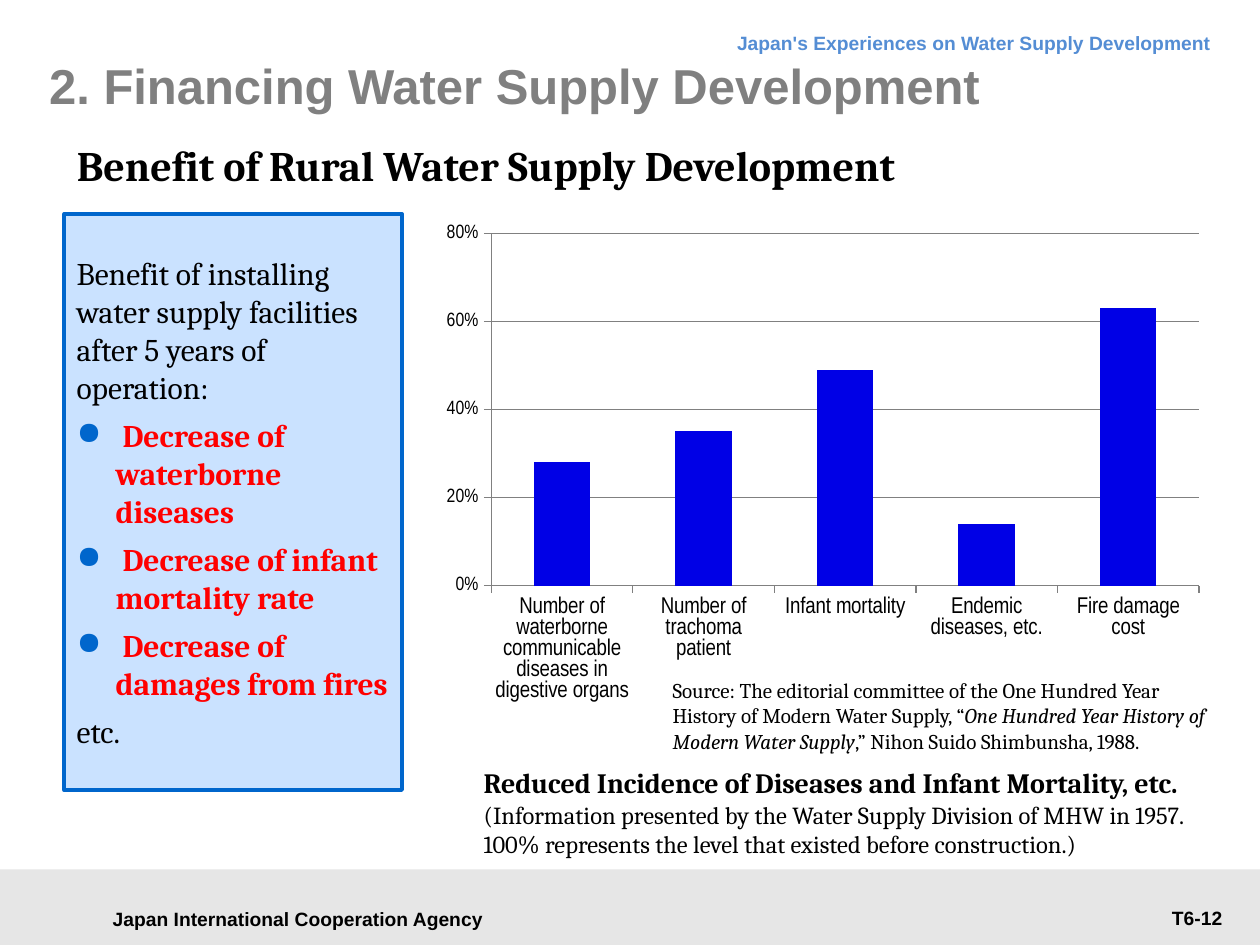
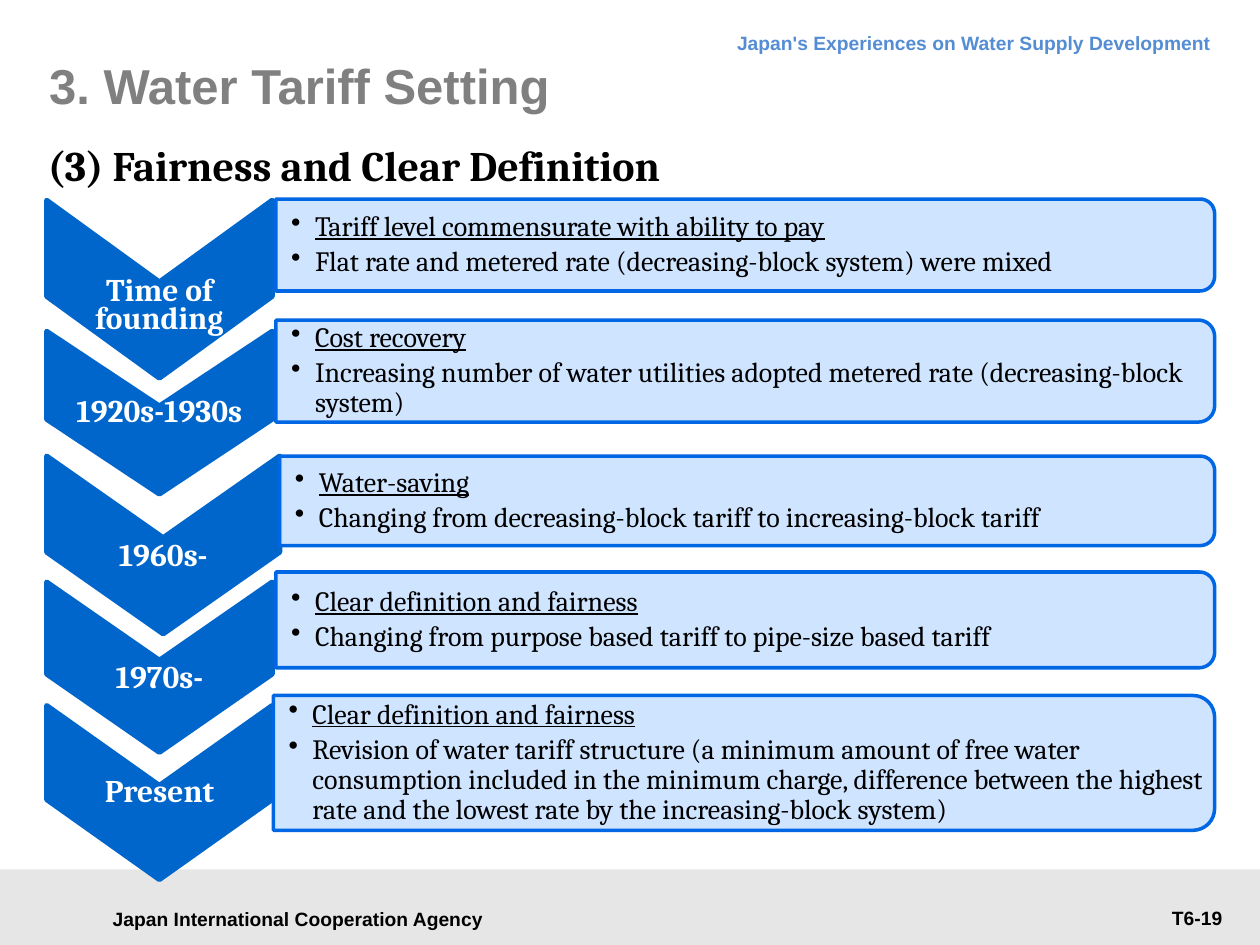
"""Build two slides on financing and tariffs of water supply in Japan."""
from dataclasses import dataclass
from math import cos, pi, sin

from lxml.etree import SubElement
from pptx import Presentation
from pptx.chart.data import CategoryChartData
from pptx.dml.color import RGBColor
from pptx.enum.chart import XL_CHART_TYPE, XL_TICK_MARK
from pptx.enum.shapes import MSO_SHAPE
from pptx.enum.text import MSO_ANCHOR, PP_ALIGN
from pptx.oxml.ns import qn
from pptx.util import Inches, Pt

COLUMNS, ROWS = 100, 75


@dataclass(frozen=True)
class Style:
    """Type face, size, colour and weight of a paragraph."""
    face: str
    size: int
    color: str = "000000"
    bold: bool = False


@dataclass(frozen=True)
class Theme:
    """Colours and type styles of the deck."""
    band: str = "E6E6E6"
    blue: str = "0066CC"
    edge: str = "0067E4"
    pale: str = "CAE2FF"
    red: str = "FF0000"
    bar: str = "0000E6"
    rule: str = "808080"
    title: Style = Style("Arial", 28, "808080", True)
    strap: Style = Style("Arial", 11, "548DD4", True)
    footer: Style = Style("Arial", 11, bold=True)
    heading: Style = Style("Cambria", 24, bold=True)
    body: Style = Style("Cambria", 18)
    gain: Style = Style("Cambria", 18, "FF0000", True)
    era: Style = Style("Cambria", 18, "FFFFFF", True)
    policy: Style = Style("Cambria", 16)
    caption: Style = Style("Cambria", 14)
    source: Style = Style("Cambria", 12)
    axis: Style = Style("Arial Narrow", 11)
    category: Style = Style("Arial Narrow", 13)


THEME = Theme()


def grid(*cells):
    """Turn grid cells of a tenth of an inch into lengths."""
    return [Inches(cell / 10) for cell in cells]


def rgb(color):
    """Return a colour object for a hexadecimal string."""
    return RGBColor.from_string(color)


def set_font(font, style):
    """Apply a style to a font."""
    font.name, font.size, font.bold = style.face, Pt(style.size), style.bold
    font.color.rgb = rgb(style.color)


def write(para, style, *spans):
    """Fill a paragraph with plain spans or (text, changes) pairs."""
    set_font(para.font, style)
    for part in spans:
        text, changes = (part, {}) if isinstance(part, str) else part
        span = para.add_run()
        span.text = text
        for name, value in changes.items():
            setattr(span.font, name, value)


def next_para(frame):
    """Return the empty first paragraph, or a new one."""
    first = frame.paragraphs[0]
    return frame.add_paragraph() if first.runs else first


def indent(para, margin, first=0):
    """Set the left margin and first line indent in inches."""
    props = para._p.get_or_add_pPr()
    props.set("marL", str(Inches(margin)))
    props.set("indent", str(Inches(first)))


def add_bullet(para, mark, hang, color=None):
    """Give a paragraph a hanging bullet."""
    indent(para, hang, -hang)
    props = para._p.get_or_add_pPr()
    if color:
        SubElement(SubElement(props, qn("a:buClr")), qn("a:srgbClr")).set("val", color)
    SubElement(props, qn("a:buChar")).set("char", mark)


def set_frame(shape, anchor, insets=(1, 0.5, 1, 0.5)):
    """Set wrapping, anchor and insets of a shape's text."""
    frame = shape.text_frame
    frame.word_wrap, frame.vertical_anchor = True, anchor
    (frame.margin_left, frame.margin_top,
     frame.margin_right, frame.margin_bottom) = grid(*insets)
    return frame


def add_label(page, place, style, *spans, anchor=MSO_ANCHOR.TOP,
              align=PP_ALIGN.LEFT, insets=(1, 0.5, 1, 0.5)):
    """Add a text box with one paragraph and return the paragraph."""
    box = page.shapes.add_textbox(*grid(*place))
    para = set_frame(box, anchor, insets).paragraphs[0]
    para.alignment = align
    write(para, style, *spans)
    return para


def paint(shape, fill, edge=None, weight=0):
    """Give a shape a flat fill and an optional outline."""
    shape.shadow.inherit = False
    shape.fill.solid()
    shape.fill.fore_color.rgb = rgb(fill)
    if edge:
        shape.line.color.rgb, shape.line.width = rgb(edge), Pt(weight)
    else:
        shape.line.fill.background()


def add_outline(page, points):
    """Add a closed freeform through grid points."""
    corners = [tuple(grid(*point)) for point in points]
    builder = page.shapes.build_freeform(*corners[0], scale=1.0)
    builder.add_line_segments(corners[1:], close=True)
    return builder.convert_to_shape()


def add_page(deck, title, number):
    """Add a page with band, footers, strapline and title."""
    page = deck.slides.add_slide(deck.slide_layouts[6])
    band = page.shapes.add_shape(MSO_SHAPE.RECTANGLE, *grid(0, 69, COLUMNS, 6))
    paint(band, THEME.band)
    add_label(page, (7.1, 71.2, 33.1, 3.4), THEME.footer,
              "Japan International Cooperation Agency",
              anchor=MSO_ANCHOR.MIDDLE, align=PP_ALIGN.CENTER)
    strap = add_label(page, (27.2, 1.3, 69.9, 3.8), THEME.strap,
                      "Japan's Experiences on Water Supply Development",
                      align=PP_ALIGN.RIGHT)
    strap.line_spacing = Pt(18)
    add_label(page, (82.3, 71.4, 15.7, 2.9), THEME.footer, number,
              align=PP_ALIGN.RIGHT)
    add_label(page, (3.9, 2.8, 89.8, 7.9), THEME.title, title,
              anchor=MSO_ANCHOR.MIDDLE, insets=(0, 0, 0, 0))
    return page


def add_heading(page, left, text):
    """Add the serif heading below the title."""
    para = add_label(page, (left, 10.6, 92, 4.5), THEME.heading, text,
                     insets=(0.4, 0, 0, 0))
    indent(para, 0.06)
    para.line_spacing = Pt(32)


def add_benefits(page, place, opening, gains, closing):
    """Add the bordered box that lists the benefits."""
    box = page.shapes.add_shape(MSO_SHAPE.RECTANGLE, *grid(*place))
    paint(box, THEME.pale, THEME.blue, 2.25)
    frame = set_frame(box, MSO_ANCHOR.MIDDLE)
    write(next_para(frame), THEME.body, opening)
    for gain in gains:
        para = next_para(frame)
        add_bullet(para, "●", 0.31, THEME.blue)
        write(para, THEME.gain, " " + gain)
    write(next_para(frame), THEME.body, closing)
    for para in frame.paragraphs:
        para.alignment = PP_ALIGN.LEFT
    for para in frame.paragraphs[1:]:
        para.space_before = Pt(6)


def add_columns(page, place, shares):
    """Add the column chart of reductions."""
    data = CategoryChartData(number_format="0%")
    data.categories = list(shares)
    data.add_series("Series 1", list(shares.values()))
    chart = page.shapes.add_chart(XL_CHART_TYPE.COLUMN_CLUSTERED, *grid(*place), data).chart
    chart.has_legend = chart.has_title = False
    set_font(chart.font, THEME.axis)
    plot = chart.plots[0]
    plot.gap_width, plot.vary_by_categories = 150, False
    fill = plot.series[0].format.fill
    fill.solid()
    fill.fore_color.rgb = rgb(THEME.bar)
    scale = chart.value_axis
    scale.minimum_scale, scale.maximum_scale, scale.major_unit = 0, 0.8, 0.2
    scale.tick_labels.number_format = "0%"
    scale.tick_labels.number_format_is_linked = False
    for axis, style in ((scale, THEME.axis), (chart.category_axis, THEME.category)):
        axis.major_tick_mark = XL_TICK_MARK.OUTSIDE
        axis.format.line.color.rgb = rgb(THEME.rule)
        set_font(axis.tick_labels.font, style)
    scale.major_gridlines.format.line.color.rgb = rgb(THEME.rule)


def add_era(page, top, width, height, text, drop):
    """Add a downward chevron whose label sits lower by drop."""
    left, side = 3.7, 0.54 * height
    middle, right, bottom = left + width / 2, left + width, top + height
    chevron = add_outline(page, [
        (right, top), (right, top + side), (middle, bottom),
        (left, top + side), (left, top), (middle, bottom - side)])
    paint(chevron, THEME.blue, THEME.blue, 3)
    frame = set_frame(chevron, MSO_ANCHOR.MIDDLE, (0.1, 2 * drop, 0.1, 0))
    para = frame.paragraphs[0]
    para.alignment, para.line_spacing = PP_ALIGN.CENTER, Pt(16)
    write(para, THEME.era, text)


def add_policy(page, left, top, height, aim, detail):
    """Add a panel with rounded right corners and two bullets."""
    right, bottom, radius = 96.4, top + height, 0.16 * height
    angles = [pi / 2 * step / 8 for step in range(9)]
    lower = [(right - radius + radius * cos(turn), bottom - radius + radius * sin(turn))
             for turn in angles]
    upper = [(x, top + bottom - y) for x, y in reversed(lower)]
    panel = add_outline(page, [(left, top), *upper, *lower, (left, bottom)])
    paint(panel, THEME.pale, THEME.edge, 2)
    tint = panel.fill._xPr.find(".//" + qn("a:srgbClr"))
    SubElement(tint, qn("a:alpha")).set("val", "90000")
    frame = set_frame(panel, MSO_ANCHOR.MIDDLE, (1.2, 0.5, 0.5, 0.5))
    for text, changes in ((aim, {"underline": True}), (detail, {})):
        para = next_para(frame)
        add_bullet(para, "•", 0.19)
        para.alignment = PP_ALIGN.LEFT
        para.line_spacing, para.space_after = 0.9, Pt(3)
        write(para, THEME.policy, (text, changes))


def build_benefit_page(deck):
    """Build the page on benefits of rural water supply."""
    page = add_page(deck, "2. Financing Water Supply Development", "T6-12")
    add_columns(page, (34.2, 17, 62.2, 39.6), {
        "Number of waterborne communicable diseases in digestive organs": 0.28,
        "Number of trachoma patient": 0.35,
        "Infant mortality": 0.49,
        "Endemic diseases, etc.": 0.14,
        "Fire damage cost": 0.63})
    add_label(page, (52.4, 53.3, 44.9, 7.1), THEME.source,
              "Source: The editorial committee of the One Hundred Year "
              "History of Modern Water Supply, “",
              ("One Hundred Year History of Modern Water Supply", {"italic": True}),
              ",” Nihon Suido Shimbunsha, 1988.")
    add_heading(page, 5.1, "Benefit of Rural Water Supply Development")
    add_benefits(page, (5.1, 17, 26.8, 45.7),
                 "Benefit of installing water supply facilities after 5 years of operation:",
                 ["Decrease of waterborne diseases", "Decrease of infant mortality rate",
                  "Decrease of damages from fires"], "etc.")
    add_label(page, (37.4, 60.3, 58.9, 8.4), THEME.caption,
              ("Reduced Incidence of Diseases and Infant Mortality, etc. ",
               {"bold": True, "size": Pt(16)}),
              "(Information presented by the Water Supply Division of MHW in 1957. "
              "100% represents the level that existed before construction.)")


def build_tariff_page(deck):
    """Build the page on the history of tariff setting."""
    page = add_page(deck, "3. Water Tariff Setting", "T6-19")
    steps = [
        ((15.9, 17.9, 14.1, "Time of founding", 1.5),
         (21.9, 15.8, 7.3, "Tariff level commensurate with ability to pay",
          "Flat rate and metered rate (decreasing-block system) were mixed")),
        ((26.3, 17.9, 12.9, "1920s-1930s", 0.2),
         (21.9, 25.4, 8.1, "Cost recovery",
          "Increasing number of water utilities adopted metered rate "
          "(decreasing-block system)")),
        ((36.2, 18.5, 14.1, "1960s-", 1.1),
         (22.2, 36.2, 7.1, "Water-saving",
          "Changing from decreasing-block tariff to increasing-block tariff")),
        ((46.2, 17.9, 13.5, "1970s-", 1.1),
         (21.9, 45.4, 7.6, "Clear definition and fairness",
          "Changing from purpose based tariff to pipe-size based tariff")),
        ((56, 17.9, 13.8, "Present", 0.2),
         (21.7, 55.2, 10.7, "Clear definition and fairness",
          "Revision of water tariff structure (a minimum amount of free water "
          "consumption included in the minimum charge, difference between the highest "
          "rate and the lowest rate by the increasing-block system)"))]
    for era, policy in steps:
        add_era(page, *era)
        add_policy(page, *policy)
    add_heading(page, 2.8, "(3) Fairness and Clear Definition")


def main():
    """Build and save the deck."""
    deck = Presentation()
    deck.slide_width, deck.slide_height = grid(COLUMNS, ROWS)
    build_benefit_page(deck)
    build_tariff_page(deck)
    deck.save("out.pptx")


if __name__ == "__main__":
    main()
